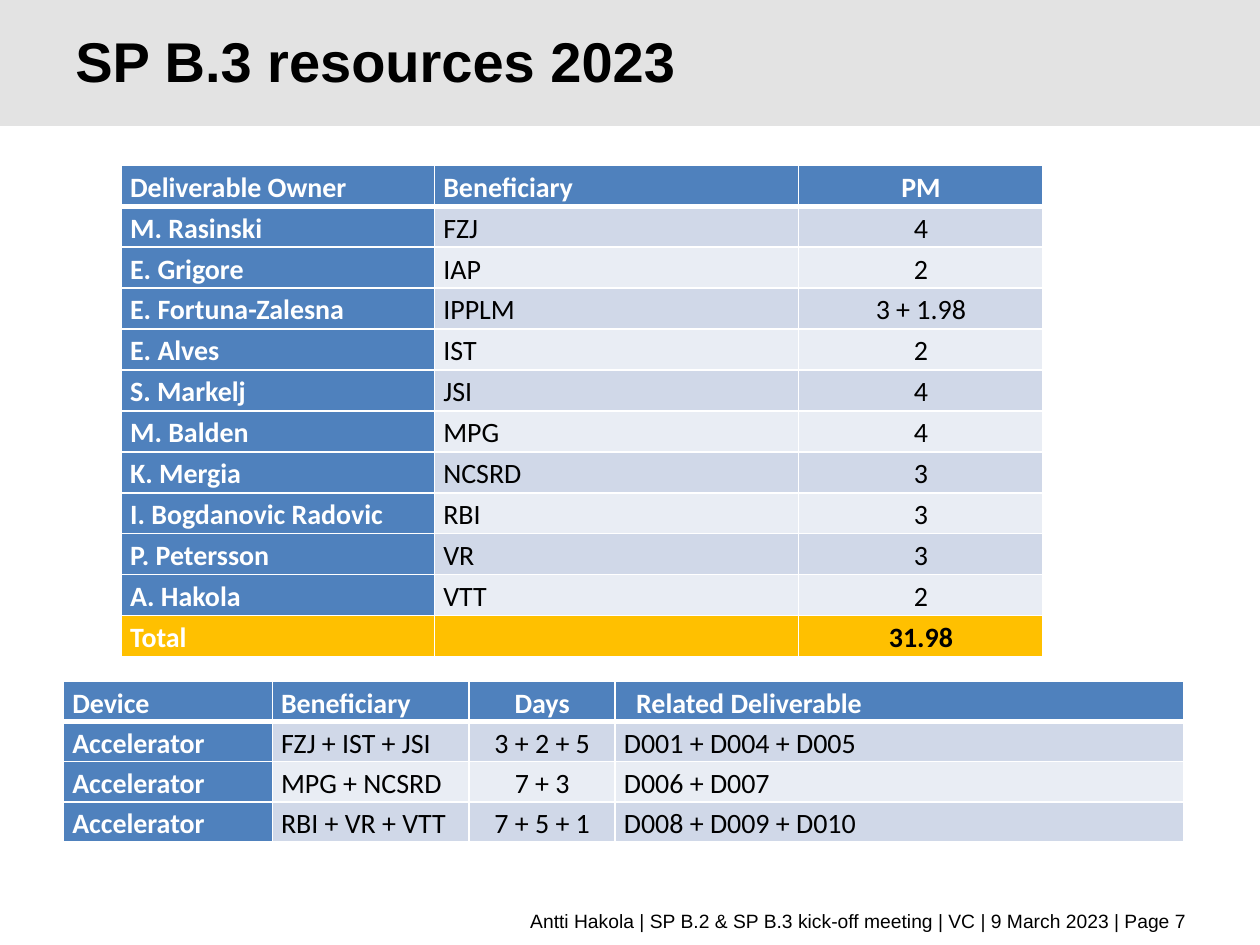
"""Build the SP B.3 resources slide with its staffing and device tables."""
import pptx
import pptx.dml.color
import pptx.enum.shapes
import pptx.enum.text
import pptx.oxml
import pptx.oxml.ns
import pptx.util

Pt = pptx.util.Pt
ALIGN = pptx.enum.text.PP_ALIGN
MIDDLE = pptx.enum.text.MSO_ANCHOR.MIDDLE
BLUE, GOLD, WHITE, BLACK = "4F81BD", "FFC000", "FFFFFF", "000000"
BANDS = ["E9EDF4", "D0D8E8"]


def color(value):
    return pptx.dml.color.RGBColor.from_string(value)


def write(text_frame, text, paragraph_format, font_format, font_color):
    paragraph = text_frame.paragraphs[0]
    for name, value in paragraph_format.items():
        setattr(paragraph, name, value)
    run = paragraph.add_run()
    run.text = text
    for name, value in font_format.items():
        setattr(run.font, name, value)
    run.font.color.rgb = color(font_color)


presentation = pptx.Presentation()
presentation.slide_width, presentation.slide_height = Pt(720), Pt(540)
slide = presentation.slides.add_slide(presentation.slide_layouts[6])

band = slide.shapes.add_shape(
    pptx.enum.shapes.MSO_SHAPE.RECTANGLE, Pt(0), Pt(0), Pt(720), Pt(72))
band.shadow.inherit = False
band.fill.solid()
band.fill.fore_color.rgb = color("E3E3E3")
band.line.fill.background()

text_boxes = [
    ("Antti Hakola | SP B.2 & SP B.3 kick-off meeting | VC | 9 March 2023 | Page 7",
     (36.7, 515.5, 648.7, 20.9),
     {"alignment": ALIGN.RIGHT},
     {"name": "Arial", "size": Pt(11)}),
    ("SP B.3 resources 2023",
     (36, 3.6, 594, 68.4),
     {"alignment": ALIGN.LEFT, "line_spacing": Pt(32)},
     {"name": "Arial", "size": Pt(32), "bold": True}),
]
for text, box, paragraph_format, font_format in text_boxes:
    text_box = slide.shapes.add_textbox(*map(Pt, box))
    frame_format = {"word_wrap": True, "vertical_anchor": MIDDLE}
    for name, value in frame_format.items():
        setattr(text_box.text_frame, name, value)
    write(text_box.text_frame, text, paragraph_format, font_format, BLACK)

staff_rows = [
    ("Deliverable Owner", "Beneficiary", "PM"),
    ("M. Rasinski", "FZJ", "4"),
    ("E. Grigore", "IAP", "2"),
    ("E. Fortuna-Zalesna", "IPPLM", "3 + 1.98"),
    ("E. Alves", "IST", "2"),
    ("S. Markelj", "JSI", "4"),
    ("M. Balden", "MPG", "4"),
    ("K. Mergia", "NCSRD", "3"),
    ("I. Bogdanovic Radovic", "RBI", "3"),
    ("P. Petersson", "VR", "3"),
    ("A. Hakola", "VTT", "2"),
    ("Total", "", "31.98"),
]
device_rows = [
    ("Device", "Beneficiary", "Days", "Related Deliverable"),
    ("Accelerator", "FZJ + IST + JSI", "3 + 2 + 5", "D001 + D004 + D005"),
    ("Accelerator", "MPG + NCSRD", "7 + 3", "D006 + D007"),
    ("Accelerator", "RBI + VR + VTT", "7 + 5 + 1", "D008 + D009 + D010"),
]
tables = [
    (staff_rows, 69.4, 94.5, [179, 208, 139.8], 23.4),
    (device_rows, 36.3, 389.3, [119.3, 112.5, 83.5, 324.8], 23),
]
for rows, left, top, widths, row_height in tables:
    table = slide.shapes.add_table(
        len(rows), len(widths), Pt(left), Pt(top),
        Pt(sum(widths)), Pt(row_height * len(rows))).table
    for column, width in zip(table.columns, widths):
        column.width = Pt(width)
    for row_index, texts in enumerate(rows):
        table.rows[row_index].height = Pt(row_height)
        is_header = row_index == 0
        is_total = texts[0] == "Total"
        for column_index, text in enumerate(texts):
            cell = table.cell(row_index, column_index)
            is_label = is_header or column_index == 0
            is_indented = is_header and column_index == 3
            cell_format = {
                "margin_left": Pt(12 if is_indented else 5),
                "margin_right": Pt(5),
                "margin_top": Pt(0),
                "margin_bottom": Pt(0),
            }
            for name, value in cell_format.items():
                setattr(cell, name, value)
            heavy_edge = {0: "lnB", 1: "lnT"}.get(row_index)
            for edge in ("lnL", "lnR", "lnT", "lnB"):
                width = Pt(3 if edge == heavy_edge else 1)
                cell._tc.get_or_add_tcPr().append(pptx.oxml.parse_xml(
                    f'<a:{edge} {pptx.oxml.ns.nsdecls("a")} w="{width}"><a:solidFill>'
                    f'<a:srgbClr val="{WHITE}"/></a:solidFill></a:{edge}>'))
            cell.fill.solid()
            cell.fill.fore_color.rgb = color(
                GOLD if is_total else BLUE if is_label else BANDS[row_index % 2])
            if text:
                write(cell.text_frame, text,
                      {"alignment": ALIGN.CENTER if column_index == 2 else ALIGN.LEFT,
                       "line_spacing": 1.15, "space_after": Pt(2.4)},
                      {"name": "Calibri", "size": Pt(16), "bold": is_label or is_total},
                      WHITE if is_label else BLACK)

presentation.save("out.pptx")
